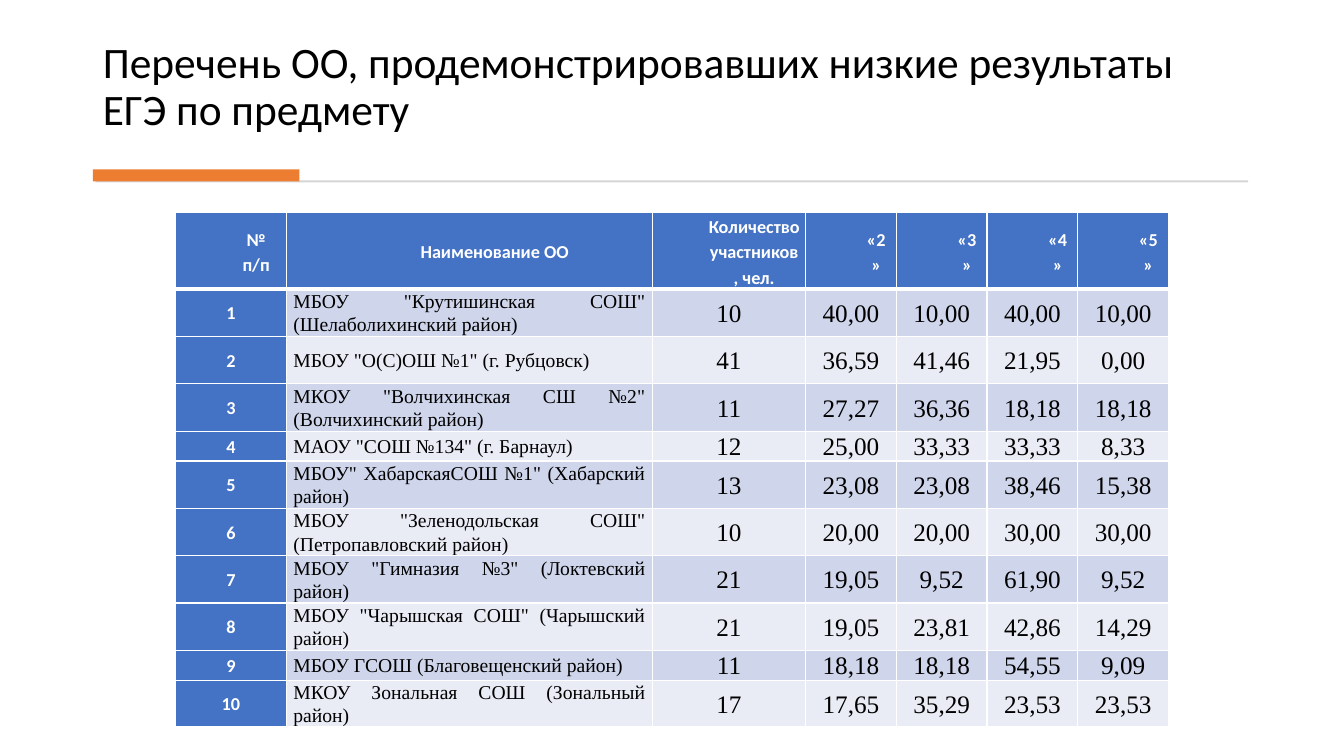
from dataclasses import dataclass

from pptx import Presentation, util as u
from pptx.dml.color import RGBColor
from pptx.enum import shapes, text
from pptx.oxml import parse_xml
from pptx.oxml.ns import nsdecls

SCALE = 9144


def px(length):
    return u.Emu(length * SCALE)


@dataclass(frozen=True)
class Theme:
    black: str = "000000"
    white: str = "FFFFFF"
    blue: str = "4472C4"
    orange: str = "ED7D31"
    grey: str = "D5D5D5"
    bands: tuple = ("CFD5EA", "E9EBF5")
    sans: str = "Calibri"
    serif: str = "Times New Roman"
    title_size: int = 31
    label_size: int = 13
    school_size: int = 14
    value_size: int = 18


class SlideBuilder:
    def __init__(self, presentation, theme):
        self.theme = theme
        self.slide = presentation.slides.add_slide(presentation.slide_layouts[5])

    def format_paragraph(self, paragraph, size, font_name, colour, bold, align, spacing):
        paragraph.alignment = align
        paragraph.line_spacing = spacing
        for run in paragraph.runs:
            run.font.size = u.Pt(size)
            run.font.name = font_name
            run.font.bold = bold
            run.font.color.rgb = RGBColor.from_string(colour)

    def title(self, wording, left, top, width, height):
        shape = self.slide.shapes.title
        shape.left, shape.top = px(left), px(top)
        shape.width, shape.height = px(width), px(height)
        frame = shape.text_frame
        frame.text = wording
        frame.word_wrap = True
        frame.auto_size = text.MSO_AUTO_SIZE.NONE
        frame.vertical_anchor = text.MSO_ANCHOR.BOTTOM
        self.format_paragraph(frame.paragraphs[0], self.theme.title_size, self.theme.sans,
                              self.theme.black, False, text.PP_ALIGN.LEFT, 0.9)

    def bar(self, left, top, width, height, colour):
        shape = self.slide.shapes.add_shape(
            shapes.MSO_SHAPE.RECTANGLE, px(left), px(top), px(width), px(height))
        shape.shadow.inherit = False
        shape.fill.solid()
        shape.fill.fore_color.rgb = RGBColor.from_string(colour)
        shape.line.fill.background()

    def cell_box(self, cell, fill, inset, top_border, bottom_border):
        properties = cell._tc.get_or_add_tcPr()
        for side, points in (("L", 1), ("R", 1), ("T", top_border), ("B", bottom_border)):
            properties.append(parse_xml(
                f'<a:ln{side} {nsdecls("a")} w="{u.Pt(points)}"><a:solidFill>'
                f'<a:srgbClr val="{self.theme.white}"/></a:solidFill></a:ln{side}>'))
        cell.fill.solid()
        cell.fill.fore_color.rgb = RGBColor.from_string(fill)
        cell.vertical_anchor = text.MSO_ANCHOR.MIDDLE
        cell.margin_left = cell.margin_right = px(inset)
        cell.margin_top = cell.margin_bottom = 0

    def label_cell(self, cell, wording, is_header):
        self.cell_box(cell, self.theme.blue, 6, 1, 3 if is_header else 1)
        cell.text_frame.text = wording
        paragraph = cell.text_frame.paragraphs[0]
        self.format_paragraph(paragraph, self.theme.label_size, self.theme.sans,
                              self.theme.white, True, text.PP_ALIGN.CENTER,
                              1.15 if is_header else 1.07)
        if is_header:
            properties = paragraph._p.get_or_add_pPr()
            properties.set("marL", str(px(50)))
            properties.set("indent", "0")

    def data_cell(self, cell, wording, row, is_school):
        self.cell_box(cell, self.theme.bands[(row - 1) % 2], 7, 3 if row == 1 else 1, 1)
        cell.text_frame.text = wording
        size = self.theme.school_size if is_school else self.theme.value_size
        align = text.PP_ALIGN.JUSTIFY if is_school else text.PP_ALIGN.CENTER
        self.format_paragraph(cell.text_frame.paragraphs[0], size, self.theme.serif,
                              self.theme.black, False, align, 1.07)

    def results_table(self, left, top, widths, heights, headers, results):
        table = self.slide.shapes.add_table(
            len(heights), len(widths), px(left), px(top),
            px(sum(widths)), px(sum(heights))).table
        for column, width in zip(table.columns, widths):
            column.width = px(width)
        for table_row, height in zip(table.rows, heights):
            table_row.height = px(height)
        for column, header in enumerate(headers):
            self.label_cell(table.cell(0, column), header, True)
        for row, (school, values) in enumerate(results, 1):
            self.label_cell(table.cell(row, 0), str(row), False)
            for column, wording in enumerate([school, *values.split()], 1):
                self.data_cell(table.cell(row, column), wording, row, column == 1)


HEADERS = ["№ п/п", "Наименование ОО", "Количество участников, чел.",
           "«2»", "«3»", "«4»", "«5»"]
RESULTS = [
    ('МБОУ "Крутишинская СОШ" (Шелаболихинский район)', "10 40,00 10,00 40,00 10,00"),
    ('МБОУ "О(С)ОШ №1" (г. Рубцовск)', "41 36,59 41,46 21,95 0,00"),
    ('МКОУ "Волчихинская СШ №2" (Волчихинский район)', "11 27,27 36,36 18,18 18,18"),
    ('МАОУ "СОШ №134" (г. Барнаул)', "12 25,00 33,33 33,33 8,33"),
    ('МБОУ" ХабарскаяСОШ №1" (Хабарский район)', "13 23,08 23,08 38,46 15,38"),
    ('МБОУ "Зеленодольская СОШ" (Петропавловский район)', "10 20,00 20,00 30,00 30,00"),
    ('МБОУ "Гимназия №3" (Локтевский район)', "21 19,05 9,52 61,90 9,52"),
    ('МБОУ "Чарышская СОШ" (Чарышский район)', "21 19,05 23,81 42,86 14,29"),
    ('МБОУ ГСОШ (Благовещенский район)', "11 18,18 18,18 54,55 9,09"),
    ('МКОУ Зональная СОШ (Зональный район)', "17 17,65 35,29 23,53 23,53"),
]
COLUMN_WIDTHS = [110, 363, 152] + [90] * 4
SHORT_ROWS = (4, 9, 10)
ROW_HEIGHTS = [75] + [24 if row in SHORT_ROWS else 47 for row in range(1, len(RESULTS) + 1)]


def main():
    presentation = Presentation()
    presentation.slide_width, presentation.slide_height = px(1333), px(750)
    theme = Theme()
    builder = SlideBuilder(presentation, theme)
    builder.title("Перечень ОО, продемонстрировавших низкие результаты ЕГЭ по предмету",
                  92, 28, 1149, 111)
    builder.bar(95, 179, 1143, 2, theme.grey)
    builder.bar(92, 168, 205, 12, theme.orange)
    builder.results_table(174, 211, COLUMN_WIDTHS, ROW_HEIGHTS, HEADERS, RESULTS)
    presentation.save("out.pptx")


if __name__ == "__main__":
    main()
